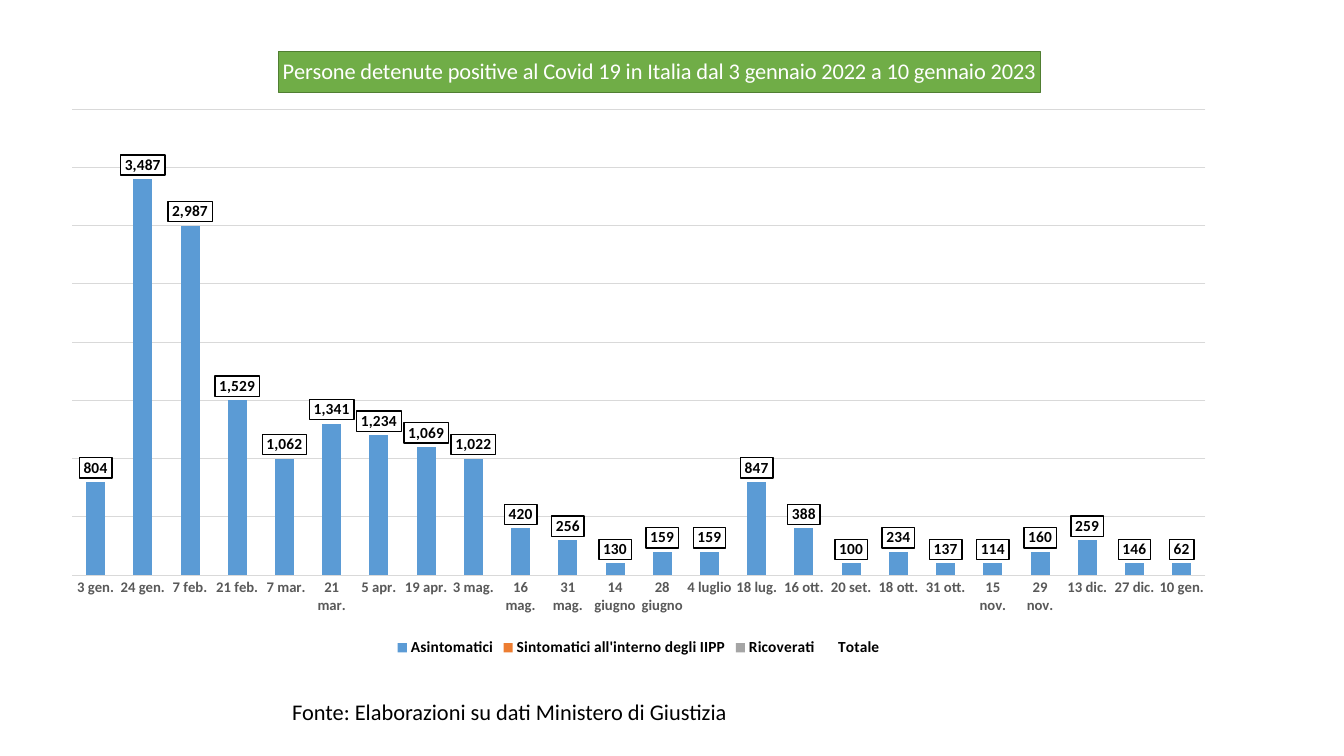
from lxml import etree
from pptx import Presentation
from pptx.chart.data import CategoryChartData
from pptx.dml.color import RGBColor
from pptx.enum.chart import (XL_CHART_TYPE, XL_LABEL_POSITION, XL_LEGEND_POSITION,
                             XL_TICK_LABEL_POSITION, XL_TICK_MARK)
from pptx.oxml import parse_xml
from pptx.oxml.ns import nsdecls, qn
from pptx.util import Inches, Pt

STACKED = XL_CHART_TYPE.COLUMN_STACKED
INSIDE_BASE = XL_LABEL_POSITION.INSIDE_BASE
BOTTOM = XL_LEGEND_POSITION.BOTTOM
NEXT_TO_AXIS = XL_TICK_LABEL_POSITION.NEXT_TO_AXIS
NO_TICK = XL_TICK_MARK.NONE

FONT = "Calibri"
BLACK, WHITE, GREY, GRID = "000000", "FFFFFF", "595959", "D9D9D9"
NUMBER_FORMAT = '_-* #,##0_-;\\-* #,##0_-;_-* "-"??_-;_-@_'
TITLE = "Persone detenute positive al Covid 19 in Italia dal 3 gennaio 2022 a 10 gennaio 2023"
SOURCE = "Fonte: Elaborazioni su dati Ministero di Giustizia"

DATES = ["3 gen.", "24 gen.", "7 feb.", "21 feb.", " 7 mar.", "21 mar.", "5 apr.", "19 apr.",
         "3 mag.", "16 mag.", "31 mag.", "14 giugno", "28 giugno", "4 luglio", "18 lug.",
         "16 ott.", "20 set.", "18 ott.", "31 ott.", "15 nov.", "29 nov.", "13 dic.",
         "27 dic.", "10 gen."]
ASYMPTOMATIC = [800, 3400, 3000, 1500, 1000, 1300, 1200, 1100, 1000, 400, 300, 100,
                200, 200, 800, 400, 100, 200, 100, 100, 200, 300, 100, 100]
NEAR_ZERO = [0] * len(DATES)
TOTAL = [804, 3487, 2987, 1529, 1062, 1341, 1234, 1069, 1022, 420, 256, 130,
         159, 159, 847, 388, 100, 234, 137, 114, 160, 259, 146, 62]
SERIES = [
    ("Asintomatici", ASYMPTOMATIC, "5B9BD5"),
    ("Sintomatici all'interno degli IIPP", NEAR_ZERO, "ED7D31"),
    ("Ricoverati", NEAR_ZERO, "A5A5A5"),
    ("Totale", TOTAL, None),
]


def rgb(color):
    return RGBColor.from_string(color)


def set_font(font, size, color=BLACK, bold=False):
    for name, value in {"name": FONT, "size": Pt(size), "bold": bold}.items():
        setattr(font, name, value)
    font.color.rgb = rgb(color)


def set_line(line, color, width=0.75):
    line.color.rgb = rgb(color)
    line.width = Pt(width)


def set_layout(element, index, **fractions):
    """Place a chart part by fractions of the chart area."""
    old = element.find(qn("c:layout"))
    if old is not None:
        element.remove(old)
    layout = etree.Element(qn("c:layout"))
    manual = etree.SubElement(layout, qn("c:manualLayout"))
    if "w" in fractions:
        etree.SubElement(manual, qn("c:layoutTarget"), val="inner")
    for axis in "xy":
        etree.SubElement(manual, qn(f"c:{axis}Mode"), val="edge")
    for name, value in fractions.items():
        etree.SubElement(manual, qn(f"c:{name}"), val=str(value))
    element.insert(index, layout)


def add_title(chart):
    title = chart.chart_title
    p = title.text_frame.paragraphs[0]
    r = p.add_run()
    r.text = TITLE
    for font in (p.font, r.font):
        set_font(font, 16, WHITE)
    title.format.fill.solid()
    title.format.fill.fore_color.rgb = rgb("70AD47")
    set_line(title.format.line, "507E32", 1)
    title.include_in_layout = False
    set_layout(title._element, 1, x=0.195, y=0.015)


def format_axes(chart):
    dates, counts = chart.category_axis, chart.value_axis
    dates.major_tick_mark = dates.minor_tick_mark = NO_TICK
    dates.tick_label_position = NEXT_TO_AXIS
    set_font(dates.tick_labels.font, 10.5, GREY, True)
    set_line(dates.format.line, GRID)
    for name, value in {"minimum_scale": 0, "maximum_scale": 4000, "major_unit": 500,
                        "has_major_gridlines": True, "visible": False}.items():
        setattr(counts, name, value)
    set_line(counts.major_gridlines.format.line, GRID)


def add_boxed_labels(series):
    labels = series.data_labels
    for name, value in {"show_value": True, "number_format": NUMBER_FORMAT,
                        "number_format_is_linked": False, "position": INSIDE_BASE}.items():
        setattr(labels, name, value)
    set_font(labels.font, 11, BLACK, True)
    box = parse_xml(
        f'<c:spPr {nsdecls("c", "a")}><a:solidFill><a:srgbClr val="{WHITE}"/></a:solidFill>'
        f'<a:ln w="{Pt(1)}"><a:solidFill><a:srgbClr val="{BLACK}"/></a:solidFill></a:ln></c:spPr>')
    labels._element.find(qn("c:txPr")).addprevious(box)


def add_cases_chart(s):
    data = CategoryChartData(number_format=NUMBER_FORMAT)
    data.categories = DATES
    for name, values, _ in SERIES:
        data.add_series(name, values)
    frame = s.shapes.add_chart(STACKED, Inches(0.48), Inches(0.42),
                               Inches(11.71), Inches(6.14), data)
    chart = frame.chart
    set_font(chart.font, 10)
    add_title(chart)
    format_axes(chart)

    plot = chart.plots[0]
    plot.gap_width, plot.overlap, plot.vary_by_categories = 150, 100, False
    for series, (_, _, color) in zip(plot.series, SERIES):
        if color:
            series.format.fill.solid()
            series.format.fill.fore_color.rgb = rgb(color)
        else:
            series.format.fill.background()
            add_boxed_labels(series)
    set_layout(chart._chartSpace.chart.plotArea, 0, x=0.02, y=0.108, w=0.96, h=0.753)

    chart.has_legend = True
    chart.legend.position = BOTTOM
    chart.legend.include_in_layout = False
    set_font(chart.legend.font, 11, BLACK, True)


def add_source(s):
    sp = s.shapes.add_textbox(Inches(2.8), Inches(6.88), Inches(4.57), Inches(0.37))
    tf = sp.text_frame
    tf.word_wrap = False
    r = tf.paragraphs[0].add_run()
    r.text = SOURCE
    set_font(r.font, 16)


def main():
    prs = Presentation()
    prs.slide_width, prs.slide_height = Inches(13.33), Inches(7.5)
    s = prs.slides.add_slide(prs.slide_layouts[6])
    add_source(s)
    add_cases_chart(s)
    prs.save("out.pptx")


if __name__ == "__main__":
    main()
